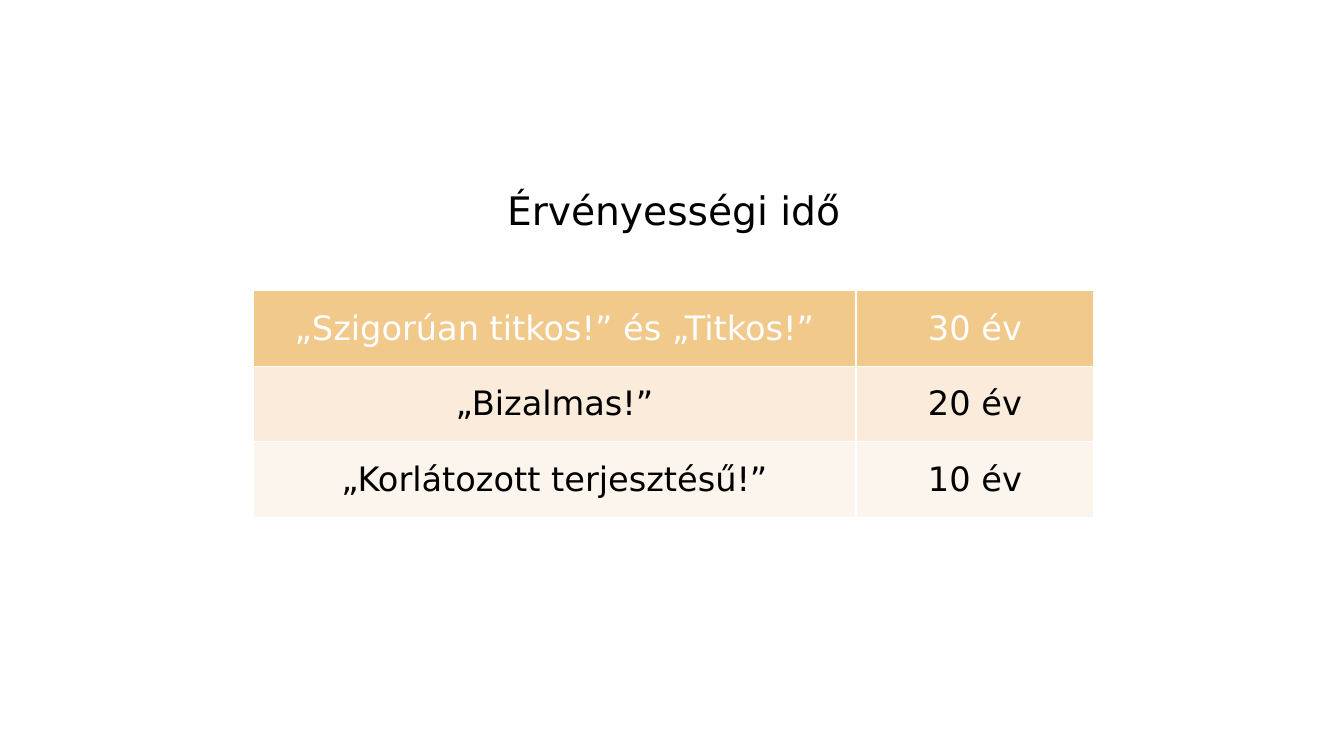
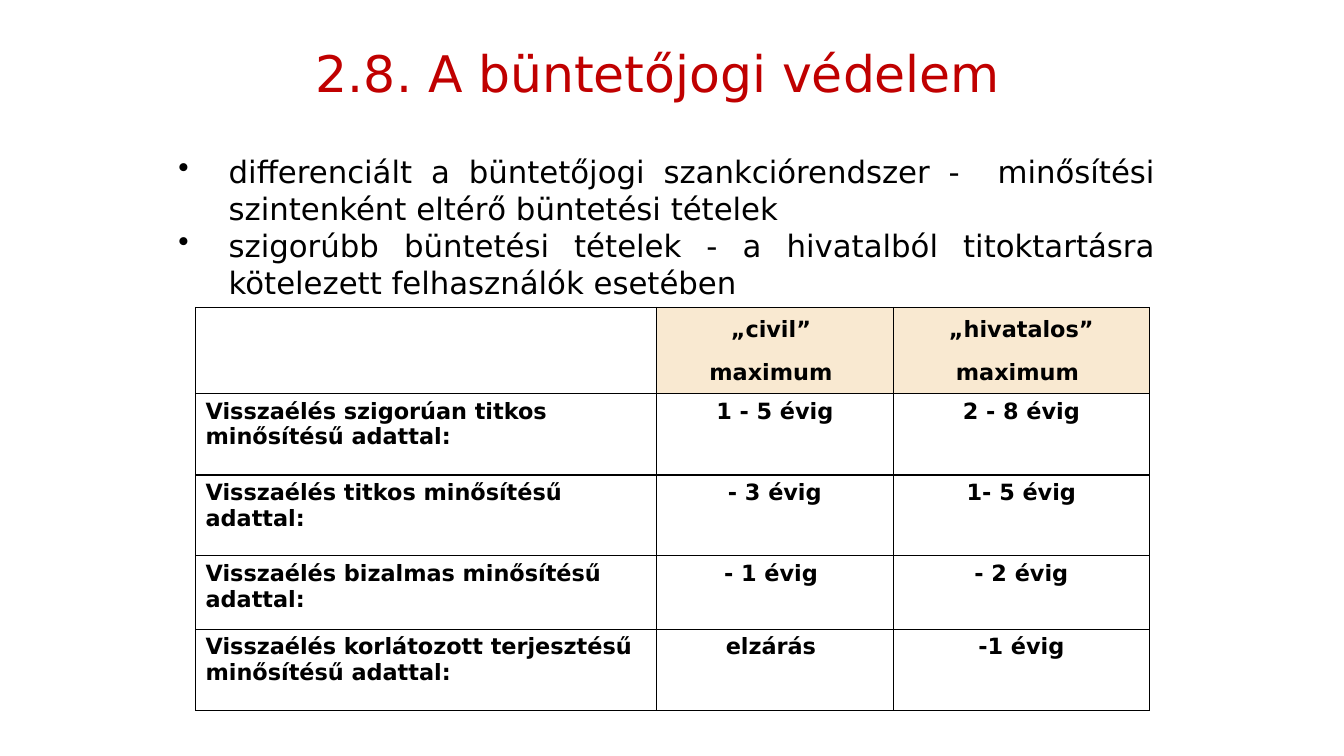
from lxml import etree
from pptx import Presentation
from pptx.dml.color import RGBColor
from pptx.enum.text import MSO_ANCHOR, MSO_AUTO_SIZE, PP_ALIGN
from pptx.oxml.ns import qn
from pptx.util import Inches, Pt

LEFT, CENTER, JUSTIFY = PP_ALIGN.LEFT, PP_ALIGN.CENTER, PP_ALIGN.JUSTIFY
TOP, MIDDLE = MSO_ANCHOR.TOP, MSO_ANCHOR.MIDDLE
NO_AUTOFIT = MSO_AUTO_SIZE.NONE

FONT = "DejaVu Sans"
COLORS = {
    "black": "000000",
    "white": "FFFFFF",
    "red": "C00000",
    "amber": "F1C98B",
    "sand": "FAEBDA",
    "cream": "FCF5EE",
    "heading": "F9E9D1",
}


class Deck:
    def __init__(self):
        self.presentation = Presentation()
        self.presentation.slide_width = Inches(13.33)
        self.presentation.slide_height = Inches(7.5)
        self.page = None

    def add_page(self):
        layout = self.presentation.slide_layouts[5]
        self.page = self.presentation.slides.add_slide(layout)

    def style(self, para, size, color="black", align=CENTER, bold=False):
        para.alignment = align
        for span in para.runs:
            font = span.font
            font.name, font.size, font.bold = FONT, Pt(size), bold
            font.color.rgb = RGBColor.from_string(COLORS[color])

    def title(self, text, left, top, width, height, size, color="black"):
        box = self.page.shapes.title
        box.left, box.top = Inches(left), Inches(top)
        box.width, box.height = Inches(width), Inches(height)
        frame = box.text_frame
        frame.text = text
        frame.auto_size = NO_AUTOFIT
        frame.vertical_anchor = MIDDLE
        self.style(frame.paragraphs[0], size, color)

    def bullets(self, items, left, top, width, height, size):
        box = self.page.shapes.add_textbox(
            Inches(left), Inches(top), Inches(width), Inches(height))
        frame = box.text_frame
        frame.word_wrap = True
        frame.text = "\n".join(items)
        for para in frame.paragraphs:
            properties = para._p.get_or_add_pPr()
            properties.set("marL", str(Inches(0.5)))
            properties.set("indent", str(-Inches(0.5)))
            etree.SubElement(properties, qn("a:buChar")).set("char", "•")
            self.style(para, size, align=JUSTIFY)

    def table(self, rows, left, top, widths, heights):
        """Add an unstyled table and return it for cell formatting."""
        frame = self.page.shapes.add_table(
            len(rows), len(widths), Inches(left), Inches(top),
            Inches(sum(widths)), Inches(sum(heights)))
        table = frame.table
        table.first_row = table.horz_banding = False
        for column, width in zip(table.columns, widths):
            column.width = Inches(width)
        for row, height, texts in zip(table.rows, heights, rows):
            row.height = Inches(height)
            for cell, text in zip(row.cells, texts):
                cell.text_frame.text = text
        return table

    def cell(self, cell, fill, border, anchor, size, **text_style):
        cell.vertical_anchor = anchor
        properties = cell._tc.get_or_add_tcPr()
        for side in ("a:lnL", "a:lnR", "a:lnT", "a:lnB"):
            line = etree.SubElement(properties, qn(side), w=str(Pt(1)))
            solid = etree.SubElement(line, qn("a:solidFill"))
            etree.SubElement(solid, qn("a:srgbClr"), val=COLORS[border])
        cell.fill.solid()
        cell.fill.fore_color.rgb = RGBColor.from_string(COLORS[fill])
        for para in cell.text_frame.paragraphs:
            self.style(para, size, **text_style)


def validity_page(deck):
    deck.add_page()
    deck.title("Érvényességi idő", 1.68, 1.8, 10, 0.57, 28)
    table = deck.table([
        ("„Szigorúan titkos!” és „Titkos!”", "30 év"),
        ("„Bizalmas!”", "20 év"),
        ("„Korlátozott terjesztésű!”", "10 év"),
    ], 2.51, 2.88, [5.98, 2.36], [0.76, 0.74, 0.76])
    row_colors = [("amber", "white"), ("sand", "black"), ("cream", "black")]
    for row, (fill, color) in zip(table.rows, row_colors):
        for cell in row.cells:
            deck.cell(cell, fill, "white", MIDDLE, 24, color=color)


def penalty_page(deck):
    deck.add_page()
    deck.title("2.8. A büntetőjogi védelem", 1.67, 0, 9.72, 1.43, 36, "red")
    deck.bullets([
        "differenciált a büntetőjogi szankciórendszer -  minősítési "
        "szintenként eltérő büntetési tételek",
        "szigorúbb büntetési tételek - a hivatalból titoktartásra "
        "kötelezett felhasználók esetében",
    ], 1.67, 1.47, 9.88, 1.58, 22)
    table = deck.table([
        ("", "„civil” \nmaximum ", "„hivatalos”\nmaximum "),
        ("Visszaélés szigorúan titkos minősítésű adattal:",
         "1 - 5 évig", "2 - 8 évig"),
        ("Visszaélés titkos minősítésű adattal:", "- 3 évig", "1- 5 évig"),
        ("Visszaélés bizalmas minősítésű adattal:", "- 1 évig ", "- 2 évig"),
        ("Visszaélés korlátozott terjesztésű minősítésű adattal:",
         "elzárás ", "-1 évig"),
    ], 1.94, 3.05, [4.57, 2.35, 2.54], [0.67, 0.81, 0.8, 0.73, 0.81])
    for row_index, row in enumerate(table.rows):
        for column_index, cell in enumerate(row.cells):
            is_heading = row_index == 0 and column_index > 0
            deck.cell(cell, "heading" if is_heading else "white", "black",
                      TOP, 16, bold=True,
                      align=CENTER if column_index else LEFT)
            if is_heading:
                for para in cell.text_frame.paragraphs:
                    para.line_spacing = 1.15
                    para.space_after = Pt(10)


def main():
    deck = Deck()
    validity_page(deck)
    penalty_page(deck)
    deck.presentation.save("out.pptx")


if __name__ == "__main__":
    main()
